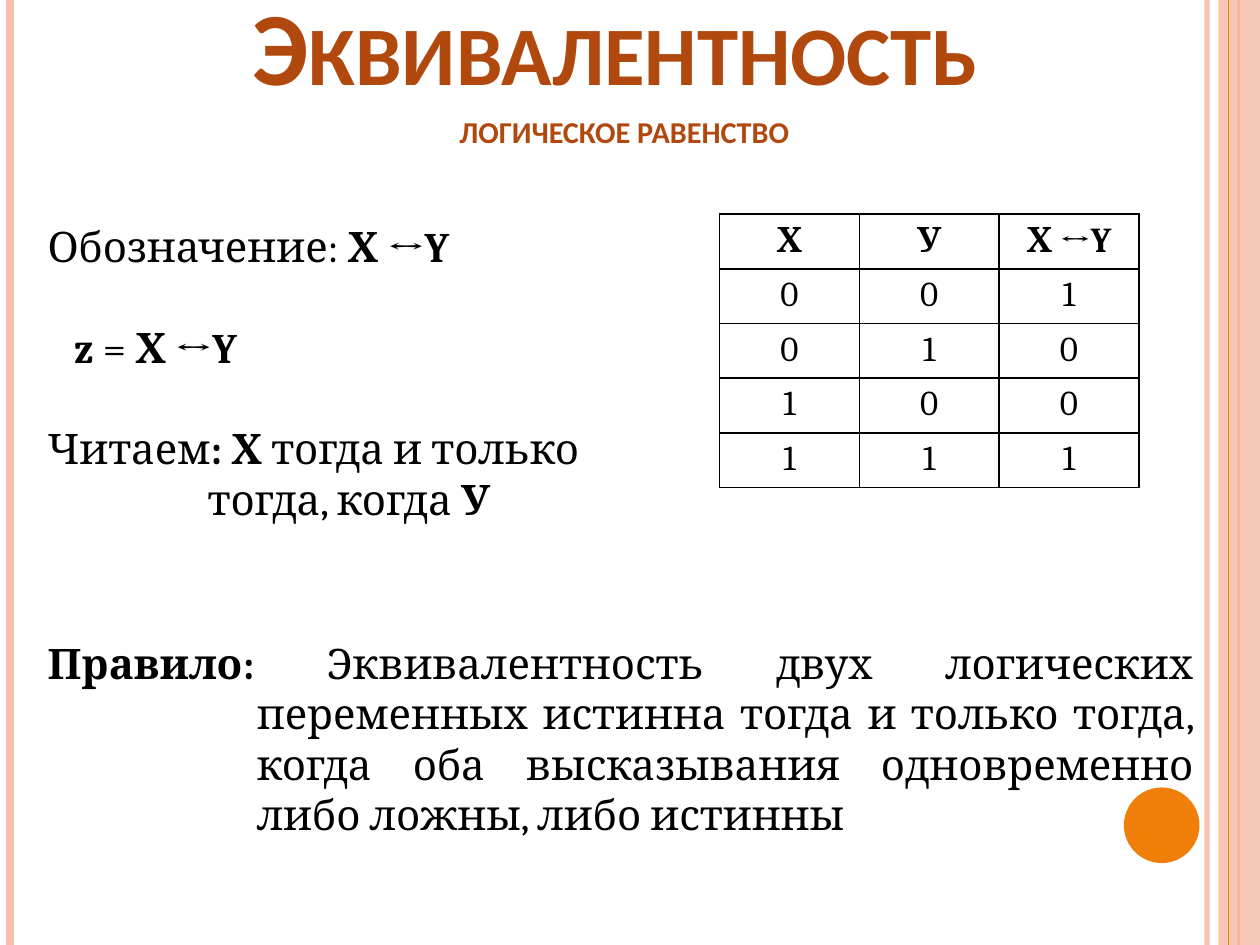
import pptx
import pptx.util
import pptx.dml.color
import pptx.enum.shapes
import pptx.enum.text
import pptx.oxml
import pptx.oxml.ns

Inches = pptx.util.Inches
Pt = pptx.util.Pt
ALIGN = pptx.enum.text.PP_ALIGN
SHAPE = pptx.enum.shapes.MSO_SHAPE
NS = pptx.oxml.ns.nsdecls("a")

ORANGE, PEACH, RUST, BLACK = "F07F09", "F6C0AB", "B1490F", "000000"
TRUTH_TABLE = [
    ("Х", "У", "Х ↔Y"),
    ("0", "0", "1"),
    ("0", "1", "0"),
    ("1", "0", "0"),
    ("1", "1", "1"),
]


def color(value):
    return pptx.dml.color.RGBColor.from_string(value)


def set_alpha(fill, percent):
    """Make a solid fill partly transparent."""
    clr = fill._xPr.find(".//" + pptx.oxml.ns.qn("a:srgbClr"))
    clr.append(pptx.oxml.parse_xml(f'<a:alpha {NS} val="{percent * 1000}"/>'))


def add_run(p, text, size=24, font="Cambria", rgb=BLACK, bold=False, small_caps=False):
    r = p.add_run()
    r.text = text
    r.font.size = Pt(size)
    r.font.name = font
    r.font.bold = bold
    r.font.color.rgb = color(rgb)
    if small_caps:
        r._r.get_or_add_rPr().set("cap", "small")
    return r


def format_paragraph(p, align=ALIGN.LEFT, before=0, left=0, hanging=0):
    p.alignment = align
    p.space_before = Pt(before)
    pPr = p._p.get_or_add_pPr()
    pPr.set("marL", str(Inches(left)))
    pPr.set("indent", str(-Inches(hanging)))


def add_vertical_line(slide, x, width, rgb, alpha=100):
    line = slide.shapes.add_connector(
        pptx.enum.shapes.MSO_CONNECTOR.STRAIGHT, Inches(x), 0, Inches(x), Inches(7.5))
    line.line.width = Pt(width)
    line.line.color.rgb = color(rgb)
    if alpha < 100:
        set_alpha(line.line.fill, alpha)
    line._element.spPr.append(pptx.oxml.parse_xml(f"<a:effectLst {NS}/>"))


def add_plain_shape(slide, kind, box, rgb, alpha=100):
    sp = slide.shapes.add_shape(kind, *map(Inches, box))
    sp.shadow.inherit = False
    sp.fill.solid()
    sp.fill.fore_color.rgb = color(rgb)
    if alpha < 100:
        set_alpha(sp.fill, alpha)
    sp.line.fill.background()


def add_decoration(slide):
    add_vertical_line(slide, 9.58, 3, PEACH, alpha=93)
    add_vertical_line(slide, 0.08, 4.5, PEACH)
    add_vertical_line(slide, 9.83, 1.5, ORANGE)
    add_plain_shape(slide, SHAPE.RECTANGLE, (9.67, 0, 0.33, 7.5), PEACH, alpha=87)
    add_vertical_line(slide, 9.75, 0.75, ORANGE)
    add_plain_shape(slide, SHAPE.OVAL, (8.92, 6.25, 0.6, 0.6), ORANGE)


def fill_title(title):
    title.left, title.top, title.width, title.height = map(Inches, (0.35, 0, 9.21, 1.25))
    tf = title.text_frame
    tf.auto_size = pptx.enum.text.MSO_AUTO_SIZE.NONE
    tf.vertical_anchor = pptx.enum.text.MSO_ANCHOR.BOTTOM
    p = tf.paragraphs[0]
    format_paragraph(p, ALIGN.CENTER)
    style = dict(font="Calibri", rgb=RUST, bold=True, small_caps=True)
    add_run(p, "Эквивалентность", size=59.4, **style)
    add_run(p, " ", size=54, **style)
    p.add_line_break()
    add_run(p, "логическое равенство", size=21.6, **style)


def add_text(slide, box, paragraphs):
    """Add a text box; each paragraph is (format, [(text, bold), ...])."""
    tf = slide.shapes.add_textbox(*map(Inches, box)).text_frame
    tf.word_wrap = True
    for i, (layout, runs) in enumerate(paragraphs):
        p = tf.add_paragraph() if i else tf.paragraphs[0]
        format_paragraph(p, **layout)
        for text, bold in runs:
            add_run(p, text, bold=bold)


def set_borders(cell, rgb, width):
    tcPr = cell._tc.get_or_add_tcPr()
    for i, side in enumerate(("lnL", "lnR", "lnT", "lnB")):
        tcPr.insert(i, pptx.oxml.parse_xml(
            f'<a:{side} {NS} w="{Pt(width)}"><a:solidFill>'
            f'<a:srgbClr val="{rgb}"/></a:solidFill></a:{side}>'))


def add_truth_table(slide, box, rows):
    table = slide.shapes.add_table(len(rows), len(rows[0]), *map(Inches, box)).table
    for i, row in enumerate(rows):
        for j, text in enumerate(row):
            cell = table.cell(i, j)
            cell.fill.background()
            set_borders(cell, BLACK, 1)
            p = cell.text_frame.paragraphs[0]
            p.alignment = ALIGN.CENTER
            add_run(p, text, size=20, bold=i == 0)


def main():
    prs = pptx.Presentation()
    prs.slide_width, prs.slide_height = Inches(10), Inches(7.5)
    slide = prs.slides.add_slide(prs.slide_layouts.get_by_name("Title Only"))
    add_decoration(slide)
    fill_title(slide.shapes.title)
    add_text(slide, (0.28, 5.01, 9.29, 1.57), [
        (dict(align=ALIGN.JUSTIFY, before=6, left=1.66, hanging=1.66), [
            ("Правило: ", True),
            ("Эквивалентность двух логических переменных истинна тогда и только тогда, "
             "когда оба высказывания одновременно либо ложны, либо истинны", False)]),
    ])
    add_text(slide, (0.28, 1.7, 4.8, 2.93), [
        (dict(), [("Обозначение: ", False), ("Х ↔Y", True)]),
        (dict(before=29, left=0.21), [("z", True), (" = ", False), ("Х ↔Y", True)]),
        (dict(before=29, left=1.27, hanging=1.27), [
            ("Читаем", False), (": Х ", True),
            ("тогда и только тогда, когда ", False), ("У", True)]),
    ])
    add_truth_table(slide, (5.71, 1.7, 3.33, 2.17), TRUTH_TABLE)
    prs.save("out.pptx")


if __name__ == "__main__":
    main()
